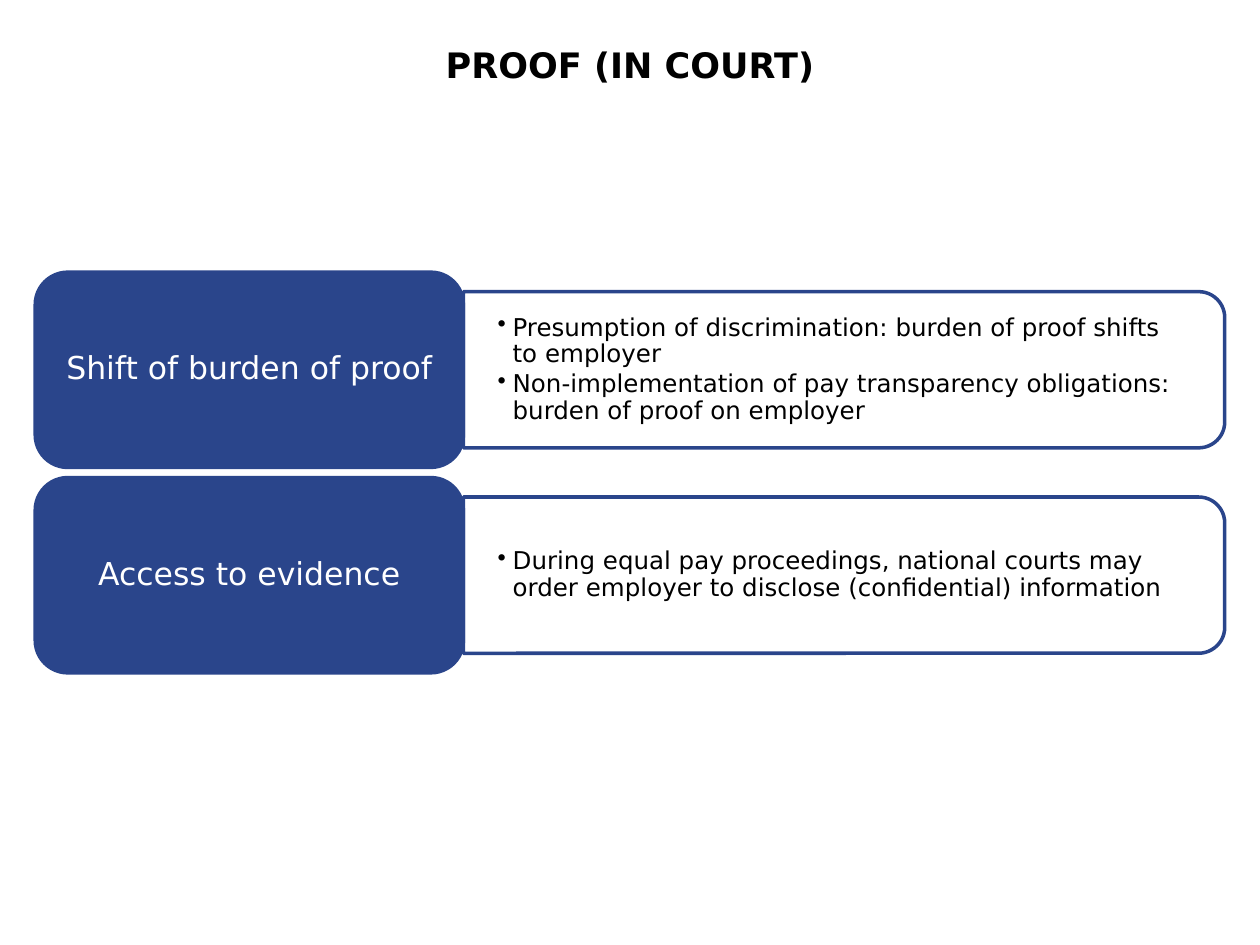
from lxml import etree
from pptx import Presentation
from pptx.dml.color import RGBColor
from pptx.enum.shapes import MSO_SHAPE
from pptx.enum.text import MSO_ANCHOR, PP_ALIGN
from pptx.oxml.ns import qn
from pptx.util import Inches, Pt

ROUND, ROUND_TOP = MSO_SHAPE.ROUNDED_RECTANGLE, MSO_SHAPE.ROUND_2_SAME_RECTANGLE
MIDDLE = MSO_ANCHOR.MIDDLE
LEFT, CENTER = PP_ALIGN.LEFT, PP_ALIGN.CENTER

TITLE = "PROOF (IN COURT)"
ROWS = [
    ("Shift of burden of proof", [
        "Presumption of discrimination: burden of proof shifts to employer",
        "Non-implementation of pay transparency obligations: burden of proof on employer",
    ]),
    ("Access to evidence", [
        "During equal pay proceedings, national courts may order employer to "
        "disclose (confidential) information",
    ]),
]
FONT = "DejaVu Sans"
BLUE, WHITE, BLACK = "2A458B", "FFFFFF", "000000"

WIDTH, HEIGHT = 10, 7.5
MARGIN = 0.28
CONTENT_W = WIDTH - 2 * MARGIN
LABEL_W = 0.36 * CONTENT_W
PANEL_W = CONTENT_W - LABEL_W
PANEL_X = MARGIN + LABEL_W
ROW_H, GAP = 1.55, 0.08
PANEL_H = 0.8 * ROW_H
BODY_W, BODY_H = PANEL_W - 0.06, PANEL_H - 0.12
BULLET_INDENT = 0.12
ROWS_H = len(ROWS) * ROW_H + (len(ROWS) - 1) * GAP
ROWS_Y = (HEIGHT - ROWS_H) / 2


def rgb(value):
    return RGBColor.from_string(value)


def add_box(kind, x, y, w, h, fill):
    s = slide.shapes.add_shape(kind, *map(Inches, (x, y, w, h)))
    s.shadow.inherit = False
    s.fill.solid()
    s.fill.fore_color.rgb = rgb(fill)
    s.line.color.rgb = rgb(BLUE)
    s.line.width = Pt(2)
    return s


def add_text_area(x, y, w, h):
    return slide.shapes.add_textbox(*map(Inches, (x, y, w, h)))


def add_bullet(p):
    pPr = p._p.get_or_add_pPr()
    pPr.set("marL", str(Inches(BULLET_INDENT)))
    pPr.set("indent", str(-Inches(BULLET_INDENT)))
    etree.SubElement(pPr, qn("a:buChar"), char="•")


def write(s, lines, size, color, inset=(0.1, 0.05), align=CENTER,
          bold=False, bullets=False, spacing=0.9, after=0):
    tf = s.text_frame
    dx, dy = map(Inches, inset)
    frame = dict(word_wrap=True, vertical_anchor=MIDDLE, margin_left=dx,
                 margin_right=dx, margin_top=dy, margin_bottom=dy)
    for name, value in frame.items():
        setattr(tf, name, value)
    for i, line in enumerate(lines):
        p = tf.paragraphs[0] if i == 0 else tf.add_paragraph()
        if bullets:
            add_bullet(p)
        p.alignment, p.line_spacing, p.space_after = align, spacing, Pt(after)
        r = p.add_run()
        r.text = line
        for name, value in dict(name=FONT, size=Pt(size), bold=bold).items():
            setattr(r.font, name, value)
        r.font.color.rgb = rgb(color)


def add_panel(middle):
    x = PANEL_X + (PANEL_W - PANEL_H) / 2
    s = add_box(ROUND_TOP, x, middle - PANEL_W / 2, PANEL_H, PANEL_W, WHITE)
    s.rotation = 90
    color = s._element.spPr.find(qn("a:solidFill"))[0]
    etree.SubElement(color, qn("a:alpha"), val="90000")


prs = Presentation()
prs.slide_width, prs.slide_height = Inches(WIDTH), Inches(HEIGHT)
slide = prs.slides.add_slide(prs.slide_layouts[6])

write(add_text_area(MARGIN, 0.21, CONTENT_W, 0.6), [TITLE], 20, BLACK,
      bold=True, spacing=1.0)

for i, (label, points) in enumerate(ROWS):
    top = ROWS_Y + i * (ROW_H + GAP)
    middle = top + ROW_H / 2
    add_panel(middle)
    body = add_text_area(PANEL_X, middle - BODY_H / 2, BODY_W, BODY_H)
    write(body, points, 14, BLACK, inset=(0.27, 0.14), align=LEFT,
          bullets=True, after=2)
    tab = add_box(ROUND, MARGIN, top, LABEL_W, ROW_H, BLUE)
    write(tab, [label], 18, WHITE, inset=(0.07, 0.04), after=6)

prs.save("out.pptx")
